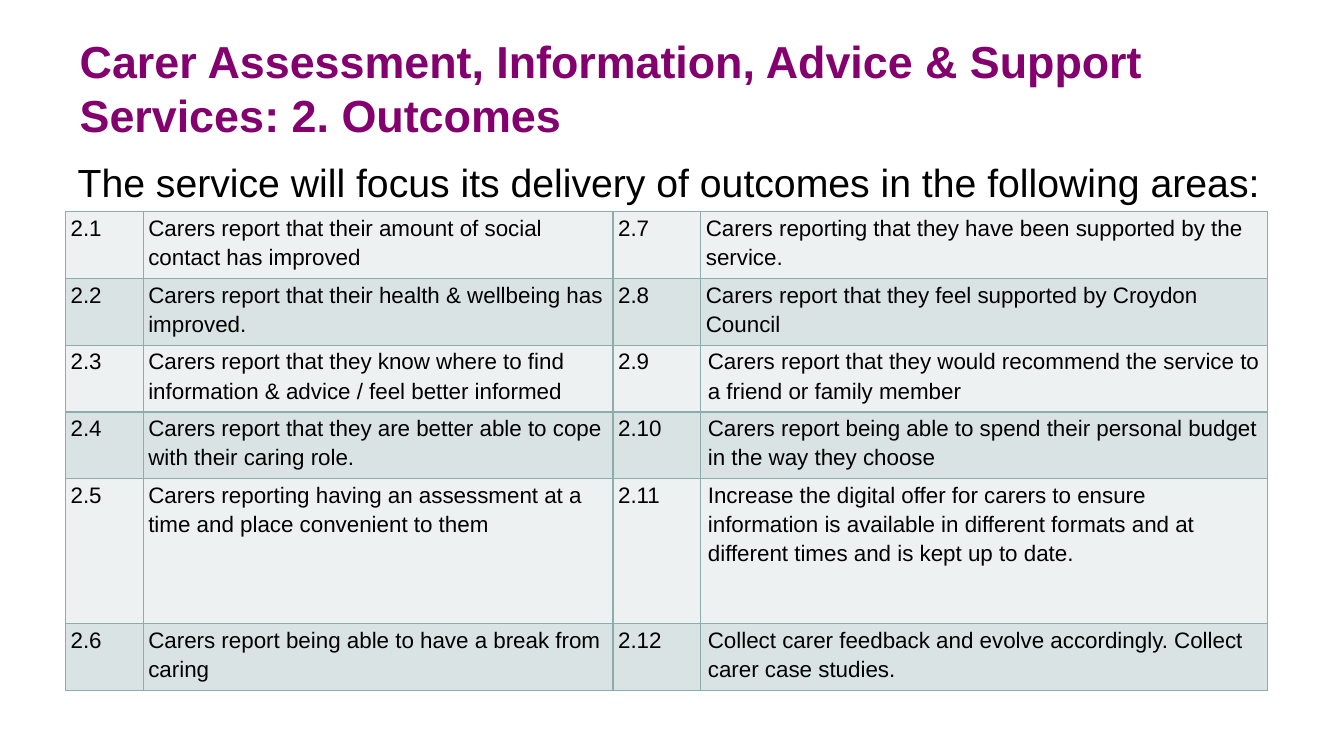
import dataclasses
import typing

import lxml.etree
import pptx
import pptx.dml.color
import pptx.enum.text
import pptx.oxml.ns
import pptx.util

PLUM = pptx.dml.color.RGBColor(0x84, 0x00, 0x6F)
BLACK = pptx.dml.color.RGBColor(0x00, 0x00, 0x00)
EDGE = pptx.dml.color.RGBColor(0x8C, 0xAD, 0xAE)
BANDS = (
    pptx.dml.color.RGBColor(0xEE, 0xF1, 0xF2),
    pptx.dml.color.RGBColor(0xDA, 0xE3, 0xE3),
)
WIDE = pptx.util.Inches(13.33)
HIGH = pptx.util.Inches(7.5)
FONT = "Arial"
COLS = (5.78, 34.96, 6.53, 42.16)
ROWS = (8.83, 8.83, 8.83, 8.83, 19.2, 8.83)
INDENT = pptx.util.Inches(0.02)
FRAME = {
    "word_wrap": True,
    "margin_left": pptx.util.Inches(0.12),
    "margin_right": pptx.util.Inches(0.12),
    "margin_top": pptx.util.Inches(0.06),
    "margin_bottom": pptx.util.Inches(0.06),
}
CELL = {
    "margin_left": pptx.util.Inches(0.05),
    "margin_right": pptx.util.Inches(0.05),
    "margin_top": 0,
    "margin_bottom": 0,
}
PARA = {"line_spacing": 1.18, "space_after": pptx.util.Pt(6)}
PLAIN = {"first_row": False, "horz_banding": False}


@dataclasses.dataclass(frozen=True)
class Area:
    left: float
    top: float
    width: float
    height: float


@dataclasses.dataclass(frozen=True)
class Label:
    area: Area
    runs: tuple[tuple[str, float], ...]
    bold: bool
    color: pptx.dml.color.RGBColor
    anchor: pptx.enum.text.MSO_ANCHOR


@dataclasses.dataclass(frozen=True)
class Goal:
    text: str
    inset: bool = False


LABELS = (
    Label(
        Area(5.03, -0.4, 90.02, 24),
        (
            ("Carer Assessment, Information, Advice & Support Services", 32),
            (": 2. Outcomes", 32.1),
        ),
        True, PLUM, pptx.enum.text.MSO_ANCHOR.MIDDLE,
    ),
    Label(
        Area(4.88, 20.13, 90.1, 61.6),
        (("The service will focus its delivery of outcomes in the following areas:", 28),),
        False, BLACK, pptx.enum.text.MSO_ANCHOR.TOP,
    ),
)
GRID = Area(4.88, 28, sum(COLS), sum(ROWS))
GOALS = (
    Goal("Carers report that their amount of social contact has improved"),
    Goal("Carers report that their health & wellbeing has improved."),
    Goal("Carers report that they know where to find information & advice / feel better informed"),
    Goal("Carers report that they are better able to cope with their caring role."),
    Goal("Carers reporting having an assessment at a time and place convenient to them"),
    Goal("Carers report being able to have a break from caring"),
    Goal("Carers reporting that they have been supported by the service."),
    Goal("Carers report that they feel supported by Croydon Council"),
    Goal("Carers report that they would recommend the service to a friend or family member", True),
    Goal("Carers report being able to spend their personal budget in the way they choose", True),
    Goal(
        "Increase the digital offer for carers to ensure information is available in "
        "different formats and at different times and is kept up to date.",
        True,
    ),
    Goal("Collect carer feedback and evolve accordingly. Collect carer case studies.", True),
)


def across(share: float) -> int:
    return round(WIDE * share / 100)


def down(share: float) -> int:
    return round(HIGH * share / 100)


def place(area: Area) -> tuple[int, int, int, int]:
    return across(area.left), down(area.top), across(area.width), down(area.height)


def apply(item: typing.Any, values: dict[str, typing.Any]) -> None:
    for name, value in values.items():
        setattr(item, name, value)


def write(para: typing.Any, text: str, size: float, bold: bool,
          color: pptx.dml.color.RGBColor) -> None:
    run = para.add_run()
    run.text = text
    apply(run.font, {"name": FONT, "size": pptx.util.Pt(size), "bold": bold})
    run.font.color.rgb = color


def draw_label(slide: typing.Any, label: Label) -> None:
    frame = slide.shapes.add_textbox(*place(label.area)).text_frame
    apply(frame, {**FRAME, "vertical_anchor": label.anchor})
    for text, size in label.runs:
        write(frame.paragraphs[0], text, size, label.bold, label.color)


def add_edges(cell: typing.Any) -> None:
    props = cell._tc.get_or_add_tcPr()
    name = pptx.oxml.ns.qn
    for side in ("a:lnL", "a:lnR", "a:lnT", "a:lnB"):
        line = lxml.etree.SubElement(props, name(side), w=str(pptx.util.Pt(1)))
        fill = lxml.etree.SubElement(line, name("a:solidFill"))
        lxml.etree.SubElement(fill, name("a:srgbClr"), val=str(EDGE))


def draw_cell(cell: typing.Any, text: str, band: pptx.dml.color.RGBColor,
              inset: bool = False) -> None:
    apply(cell, CELL)
    add_edges(cell)
    cell.fill.solid()
    cell.fill.fore_color.rgb = band
    para = cell.text_frame.paragraphs[0]
    apply(para, PARA)
    if inset:
        para._p.get_or_add_pPr().set("marL", str(INDENT))
    write(para, text, 16, False, BLACK)


def draw_table(slide: typing.Any) -> None:
    count = len(ROWS)
    table = slide.shapes.add_table(count, len(COLS), *place(GRID)).table
    apply(table, PLAIN)
    for col, share in zip(table.columns, COLS):
        col.width = across(share)
    for row, share in zip(table.rows, ROWS):
        row.height = down(share)
    for index, goal in enumerate(GOALS):
        half, row = divmod(index, count)
        band = BANDS[row % 2]
        draw_cell(table.cell(row, half * 2), f"2.{index + 1}", band)
        draw_cell(table.cell(row, half * 2 + 1), goal.text, band, goal.inset)


def main() -> None:
    deck = pptx.Presentation()
    apply(deck, {"slide_width": WIDE, "slide_height": HIGH})
    slide = deck.slides.add_slide(deck.slide_layouts[6])
    for label in LABELS:
        draw_label(slide, label)
    draw_table(slide)
    deck.save("out.pptx")


if __name__ == "__main__":
    main()
